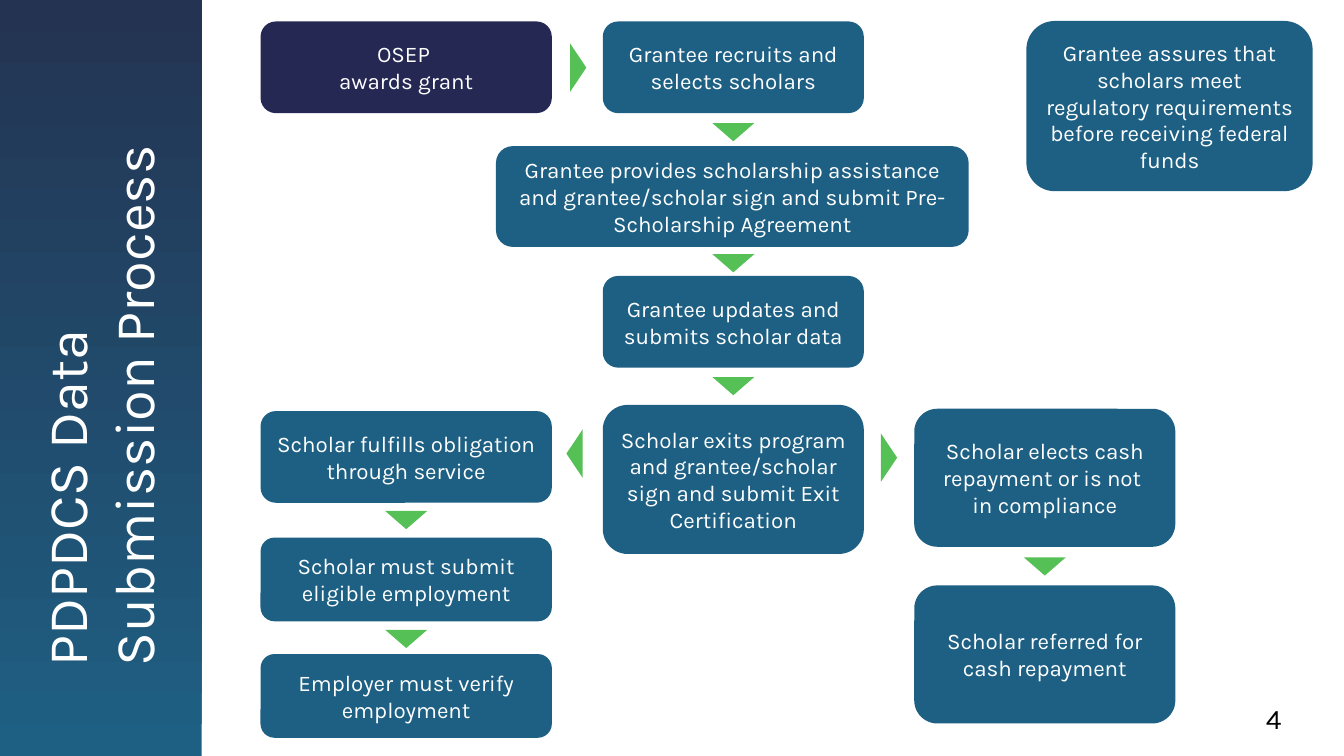
from dataclasses import dataclass

import pptx
import pptx.dml.color
import pptx.enum.shapes
import pptx.enum.text
import pptx.util

Pt = pptx.util.Pt
RGB = pptx.dml.color.RGBColor
SHAPES = pptx.enum.shapes.MSO_SHAPE
ALIGN = pptx.enum.text.PP_ALIGN
ANCHOR = pptx.enum.text.MSO_ANCHOR


@dataclass(frozen=True)
class Theme:
    font: str = "Karla"
    white: RGB = RGB(0xFF, 0xFF, 0xFF)
    black: RGB = RGB(0, 0, 0)
    navy: RGB = RGB(0x24, 0x28, 0x52)
    teal: RGB = RGB(0x1E, 0x60, 0x83)
    dusk: RGB = RGB(0x24, 0x33, 0x52)
    green: RGB = RGB(0x55, 0xC0, 0x56)
    title_size: float = 40
    step_size: float = 16
    number_size: float = 20


@dataclass(frozen=True)
class Area:
    center: float
    top: float
    width: float
    height: float


@dataclass(frozen=True)
class Step:
    text: str
    area: Area
    fill: RGB


@dataclass(frozen=True)
class Arrow:
    center: float
    middle: float
    rotation: float


THEME = Theme()
SERVICE, MAIN, CASH = 290.15, 523.8, 746.3
SERVICE_WIDTH, MAIN_WIDTH = 208.1, 186.5
RIGHT, DOWN, LEFT = 90, 180, 270

STEPS = [
    Step("OSEP \vawards grant", Area(SERVICE, 15.3, SERVICE_WIDTH, 65.5), THEME.navy),
    Step("Grantee recruits and selects scholars",
         Area(MAIN, 15.3, MAIN_WIDTH, 65.5), THEME.teal),
    Step("Grantee provides scholarship assistance and grantee/scholar sign "
         "and submit Pre-Scholarship Agreement", Area(523.1, 104.4, 337.7, 72), THEME.teal),
    Step("Grantee updates and submits scholar data",
         Area(MAIN, 197.1, MAIN_WIDTH, 65.5), THEME.teal),
    Step("Scholar exits program and grantee/scholar sign and submit Exit Certification",
         Area(MAIN, 289.2, MAIN_WIDTH, 106.5), THEME.teal),
    Step("Scholar elects cash repayment or is not \vin compliance",
         Area(CASH, 292, MAIN_WIDTH, 98.6), THEME.teal),
    Step("Scholar referred for cash repayment",
         Area(CASH, 418.2, MAIN_WIDTH, 98.6), THEME.teal),
    Step("Scholar fulfills obligation through service",
         Area(SERVICE, 293.6, SERVICE_WIDTH, 65.5), THEME.teal),
    Step("Scholar must submit eligible employment",
         Area(SERVICE, 384, SERVICE_WIDTH, 59.8), THEME.teal),
    Step("Employer must verify employment",
         Area(SERVICE, 467.2, SERVICE_WIDTH, 59.8), THEME.teal),
    Step("Grantee assures that scholars meet regulatory requirements before "
         "receiving federal funds", Area(835.4, 15, 204.5, 121.6), THEME.teal),
]

ARROWS = [
    Arrow(413, 48.3, RIGHT),
    Arrow(MAIN, 94.4, DOWN),
    Arrow(MAIN, 188, DOWN),
    Arrow(MAIN, 275.8, DOWN),
    Arrow(SERVICE, 371.5, DOWN),
    Arrow(SERVICE, 456.4, DOWN),
    Arrow(CASH, 404.6, DOWN),
    Arrow(635, 326.9, RIGHT),
    Arrow(410.4, 324, LEFT),
]


def bounds(area: Area) -> tuple:
    left = area.center - area.width / 2
    return tuple(Pt(length) for length in (left, area.top, area.width, area.height))


def add_figure(slide, kind, area: Area, rotation: float = 0):
    figure = slide.shapes.add_shape(kind, *bounds(area))
    figure.shadow.inherit = False
    figure.line.fill.background()
    figure.rotation = rotation
    return figure


def write(frame, text: str, size: float, color: RGB, align, anchor) -> None:
    for name, value in {"word_wrap": True, "vertical_anchor": anchor}.items():
        setattr(frame, name, value)
    paragraph = frame.paragraphs[0]
    paragraph.text = text
    paragraph.alignment = align
    for name, value in {"name": THEME.font, "size": Pt(size)}.items():
        setattr(paragraph.font, name, value)
    paragraph.font.color.rgb = color


def add_label(slide, text: str, area: Area, size: float, color: RGB, anchor, rotation: float = 0) -> None:
    label = slide.shapes.add_textbox(*bounds(area))
    label.rotation = rotation
    write(label.text_frame, text, size, color, ALIGN.LEFT, anchor)


def add_title_band(slide) -> None:
    band = add_figure(slide, SHAPES.RECTANGLE, Area(71, 197, 540, 146), LEFT)
    band.fill.gradient()
    band.fill.gradient_angle = 0
    for stop, color, position in zip(band.fill.gradient_stops, (THEME.teal, THEME.dusk), (0, 1)):
        stop.color.rgb = color
        stop.position = position
    add_label(slide, "PDPDCS Data Submission Process", Area(70.6, 197.3, 468, 103.7),
              THEME.title_size, THEME.white, ANCHOR.MIDDLE, LEFT)


def add_step(slide, step: Step) -> None:
    box = add_figure(slide, SHAPES.ROUNDED_RECTANGLE, step.area)
    box.fill.solid()
    box.fill.fore_color.rgb = step.fill
    write(box.text_frame, step.text, THEME.step_size, THEME.white, ALIGN.CENTER, ANCHOR.MIDDLE)


def add_arrow(slide, arrow: Arrow) -> None:
    width, height = (30, 13) if arrow.rotation == DOWN else (34.6, 11.6)
    area = Area(arrow.center, arrow.middle - height / 2, width, height)
    head = add_figure(slide, SHAPES.ISOSCELES_TRIANGLE, area, arrow.rotation)
    head.fill.solid()
    head.fill.fore_color.rgb = THEME.green


def main() -> None:
    deck = pptx.Presentation()
    deck.slide_width, deck.slide_height = Pt(960), Pt(540)
    slide = deck.slides.add_slide(deck.slide_layouts[6])
    add_title_band(slide)
    for step in STEPS:
        add_step(slide, step)
    for arrow in ARROWS:
        add_arrow(slide, arrow)
    add_label(slide, "4", Area(924.1, 497.5, 54, 31.5), THEME.number_size, THEME.black, ANCHOR.TOP)
    deck.save("out.pptx")


if __name__ == "__main__":
    main()
